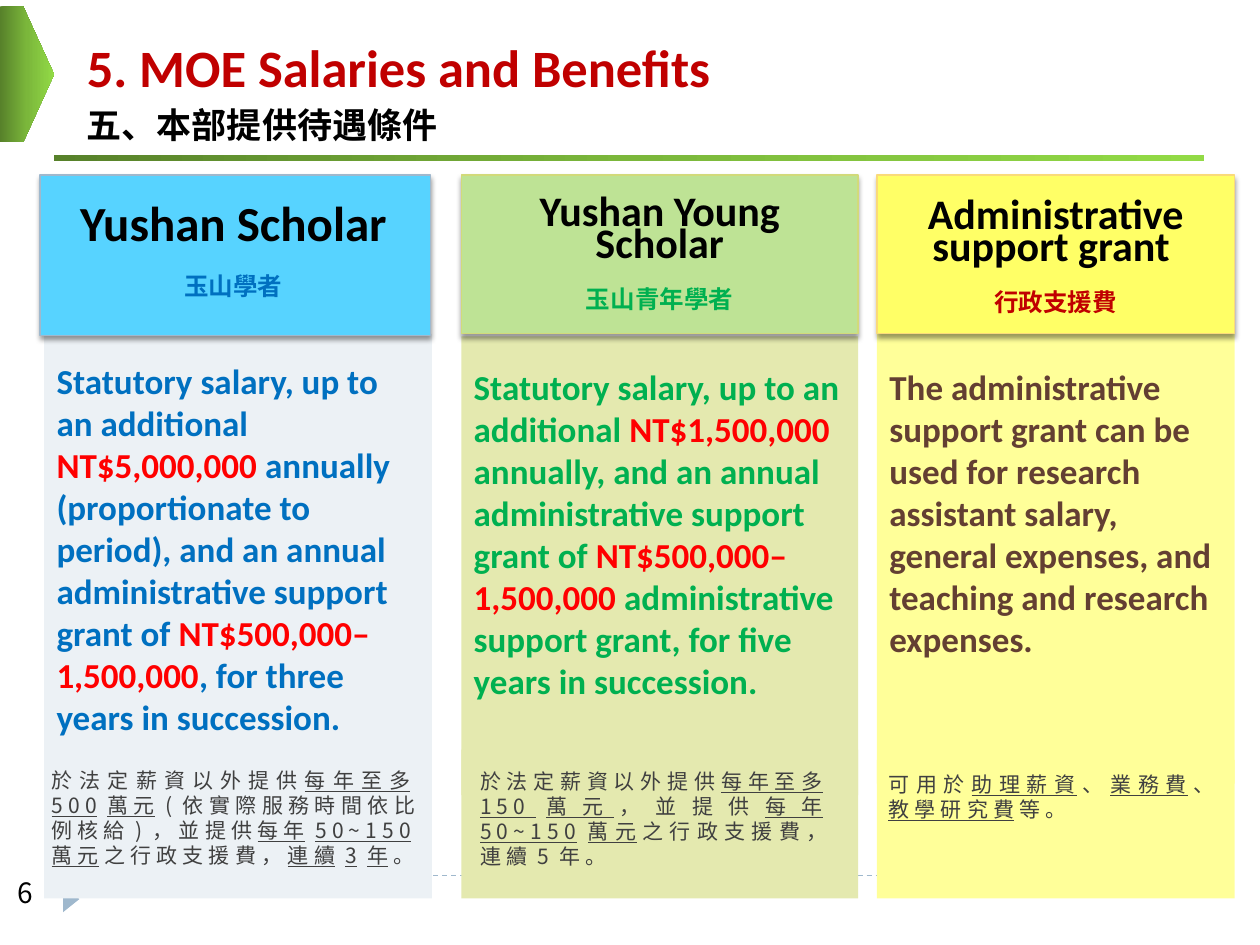
import copy
import dataclasses

import lxml.etree
import pptx
import pptx.dml.color
import pptx.enum.dml
import pptx.enum.shapes
import pptx.enum.text
import pptx.oxml.ns
import pptx.util

Cm = pptx.util.Cm
Pt = pptx.util.Pt
RGBColor = pptx.dml.color.RGBColor
Shape = pptx.enum.shapes.MSO_SHAPE
Anchor = pptx.enum.text.MSO_ANCHOR
Align = pptx.enum.text.PP_ALIGN
qn = pptx.oxml.ns.qn

LATIN = "Calibri"
CHINESE = "Noto Sans CJK SC"
BLACK = RGBColor(0, 0, 0)
GREY = RGBColor(0x40, 0x40, 0x40)
RED = RGBColor(0xFF, 0, 0)
DARK_RED = RGBColor(0xC0, 0, 0)
BLUE = RGBColor(0, 0x70, 0xC0)
GREEN = RGBColor(0, 0xB0, 0x50)
BROWN = RGBColor(0x63, 0x3F, 0x32)
STEEL = RGBColor(0x9F, 0xB8, 0xCD)
SKY = RGBColor(0x57, 0xD3, 0xFF)
PALE_BLUE = RGBColor(0xEC, 0xF1, 0xF5)
LEAF = RGBColor(0xBE, 0xE3, 0x95)
OLIVE = RGBColor(0xD2, 0xDA, 0x7A)
PALE_OLIVE = RGBColor(0xE4, 0xE9, 0xAF)
YELLOW = RGBColor(0xFF, 0xFF, 0x66)
GOLD = RGBColor(0xFA, 0xDA, 0x7A)
PALE_YELLOW = RGBColor(0xFF, 0xFF, 0x99)
GRADIENT = [(0, RGBColor(0x57, 0x81, 0x2A)), (0.5, RGBColor(0x7B, 0xB7, 0x3B)),
            (1, RGBColor(0x92, 0xDA, 0x46))]


@dataclasses.dataclass
class Column:
    """Content, colours and part boxes of one column, in centimetres from its corner."""
    box: tuple
    label_box: tuple
    body_box: tuple
    note_box: tuple
    heading: str
    heading_size: int
    subheading: str
    body: list
    note: list
    head_fill: RGBColor
    head_line: RGBColor
    fill: RGBColor
    accent: RGBColor
    sub_accent: RGBColor
    body_inset: float
    body_anchor: Anchor
    note_insets: tuple


COLUMNS = [
    Column((0.81, 3.53, 7.87, 3.23), (-0.12, 0.1, 8.03, 3.23), (0.08, 3.2, 7.82, 8.66),
           (0.08, 11.79, 7.82, 2.79), "Yushan Scholar", 28, "玉山學者",
           ["Statutory salary, up to an additional ", "NT$5,000,000 ",
            "annually (proportionate to period), and an annual administrative support grant of ",
            "NT$500,000‒1,500,000", ", for three years in succession."],
           ["於法定薪資以外提供", "每年至多500萬元", "(依實際服務時間依比例核給)，並提供",
            "每年50~150萬元", "之行政支援費，", "連續3年", "。"],
           SKY, STEEL, PALE_BLUE, BLUE, BLUE, 0.13, Anchor.MIDDLE, (0.15, 0.15, 0.23, 0.25)),
    Column((9.3, 3.53, 8, 3.2), (0, 0.08, 8, 3.2), (0, 3.25, 8, 9.25),
           (0, 11.58, 8, 3), "Yushan Young Scholar", 24, "玉山青年學者",
           ["Statutory salary, up to an additional ", "NT$1,500,000 ",
            "annually, and an annual administrative support grant of ", "NT$500,000‒1,500,000 ",
            "administrative support grant, for five years in succession."],
           ["於法定薪資以外提供", "每年至多150萬元", "，並提供", "每年50~150萬元",
            "之行政支援費，連續5年。"],
           LEAF, OLIVE, PALE_OLIVE, GREEN, GREEN, 0.58, Anchor.TOP, (0.38, 0.38, 0.51, 0.58)),
    Column((17.68, 3.53, 7.21, 3.2), (0, 0.28, 7.21, 2.92), (0, 3.2, 7.21, 9.07),
           (0, 11.79, 7.21, 2.79), "Administrative support grant ", 24, "行政支援費",
           ["The administrative support grant can be used for research assistant salary, "
            "general expenses, and teaching and research expenses."],
           ["可用於", "助理薪資", "、", "業務費", "、", "教學研究費", "等。"],
           YELLOW, GOLD, PALE_YELLOW, BROWN, DARK_RED, 0.64, Anchor.TOP, (0.23, 0.23, 0.3, 0.33)),
]


def add_text(paragraph, text, size, color, font=LATIN, bold=False, underline=False, spacing=0):
    """Append a formatted run to a paragraph."""
    run = paragraph.add_run()
    run.text = text
    run.font.size = Pt(size)
    run.font.bold = bold
    run.font.underline = underline
    run.font.color.rgb = color
    run.font.name = font
    properties = run.font._element
    east_asian = lxml.etree.Element(qn("a:ea"), typeface=font)
    properties.find(qn("a:latin")).addnext(east_asian)
    if spacing:
        properties.set("spc", str(spacing * 100))


def prepare_frame(shape, insets=(0.25, 0.13, 0.25, 0.13), anchor=Anchor.TOP, align=Align.LEFT):
    """Set wrapping, insets and anchor of a shape and return its first paragraph."""
    frame = shape.text_frame
    frame.word_wrap = True
    frame.auto_size = pptx.enum.text.MSO_AUTO_SIZE.NONE
    frame.vertical_anchor = anchor
    frame.margin_left, frame.margin_top, frame.margin_right, frame.margin_bottom = map(Cm, insets)
    frame.paragraphs[0].alignment = align
    return frame.paragraphs[0]


def add_box(slide, kind, box, fill=None, line=None):
    """Add a preset shape without shadow; box is in centimetres."""
    shape = slide.shapes.add_shape(kind, *map(Cm, box))
    shape.shadow.inherit = False
    if fill is not None:
        shape.fill.solid()
        shape.fill.fore_color.rgb = fill
    if line is None:
        shape.line.fill.background()
    else:
        shape.line.color.rgb = line
        shape.line.width = Pt(0.75)
    return shape


def add_gradient_box(slide, kind, box):
    """Add a shape filled with the green left-to-right gradient."""
    shape = add_box(slide, kind, box)
    shape.fill.gradient()
    shape.fill.gradient_angle = 0
    first_stop = shape._element.spPr.find(".//" + qn("a:gs"))
    first_stop.addnext(copy.deepcopy(first_stop))
    for stop, (position, color) in zip(shape.fill.gradient_stops, GRADIENT):
        stop.position = position
        stop.color.rgb = color
    return shape


def add_drop_shadow(shape):
    """Give a shape a soft shadow falling straight down."""
    effects = shape._element.spPr.find(qn("a:effectLst"))
    shadow = lxml.etree.SubElement(effects, qn("a:outerShdw"), blurRad=str(Pt(3)),
                                   dist=str(Pt(2)), dir="5400000", rotWithShape="0")
    color = lxml.etree.SubElement(shadow, qn("a:srgbClr"), val="000000")
    lxml.etree.SubElement(color, qn("a:alpha"), val="40000")


def add_backdrop(slide, left, width):
    """Draw the dashed rules, corner triangle and green title ornaments."""
    for top in (17.65, 3.18):
        rule = slide.shapes.add_connector(pptx.enum.shapes.MSO_CONNECTOR.STRAIGHT,
                                          Cm(left), Cm(top), Cm(left + width), Cm(top))
        rule.line.color.rgb = STEEL
        rule.line.width = Pt(0.75)
        rule.line.dash_style = pptx.enum.dml.MSO_LINE.DASH
        lxml.etree.SubElement(rule._element.spPr, qn("a:effectLst"))
    triangle = add_box(slide, Shape.ISOSCELES_TRIANGLE, (left - 0.1, 17.96, 0.53, 0.33), STEEL)
    triangle.rotation = 90
    add_gradient_box(slide, Shape.RECTANGLE, (left - 0.18, 3.12, 23.19, 0.13))
    arrow = add_gradient_box(slide, Shape.PENTAGON, (0, 0.13, 1.09, 2.74))
    arrow.adjustments[0] = 0.57


def add_titles(slide, left, top):
    """Place the title, its Chinese line and the page number."""
    title = slide.shapes.title
    title.left, title.top, title.width, title.height = map(Cm, (left, top, 13.41, 1.37))
    add_text(prepare_frame(title, anchor=Anchor.MIDDLE), "5. MOE Salaries and Benefits",
             30, DARK_RED, bold=True)
    subtitle = slide.shapes.add_textbox(*map(Cm, (left, top + 1.22, 8.99, 1.24)))
    add_text(prepare_frame(subtitle, anchor=Anchor.MIDDLE), "五、本部提供待遇條件",
             20, BLACK, font=CHINESE, bold=True)
    number = slide.shapes.add_textbox(*map(Cm, (0.1, 17.53, 1.17, 0.94)))
    add_text(prepare_frame(number), "6", 16, BLACK, font=CHINESE)


def add_column(slide, column):
    """Draw one column: body, shadowed heading and Chinese note."""
    left, top = column.box[:2]

    def place(box):
        """Move a box from the column corner to the slide."""
        return (left + box[0], top + box[1], *box[2:])

    body = add_box(slide, Shape.RECTANGLE, place(column.body_box), column.fill)
    paragraph = prepare_frame(body, (0.25, column.body_inset, 0.25, 0.13), column.body_anchor)
    for index, text in enumerate(column.body):
        add_text(paragraph, text, 20, RED if index % 2 else column.accent, bold=True)

    add_drop_shadow(add_box(slide, Shape.RECTANGLE, column.box, column.head_fill, column.head_line))
    label = slide.shapes.add_textbox(*map(Cm, place(column.label_box)))
    heading = prepare_frame(label, (0.48, 0.28, 0.48, 0.28), Anchor.MIDDLE, Align.CENTER)
    add_text(heading, column.heading, column.heading_size, BLACK, bold=True)
    subheading = label.text_frame.add_paragraph()
    subheading.alignment = Align.CENTER
    add_text(subheading, column.subheading, 14, column.sub_accent, font=CHINESE, bold=True)
    for paragraph, size in ((heading, column.heading_size), (subheading, 14)):
        paragraph.line_spacing = Pt(18)
        paragraph.space_after = Pt(0.35 * size)

    note = add_box(slide, Shape.RECTANGLE, place(column.note_box), column.fill)
    paragraph = prepare_frame(note, column.note_insets, align=Align.JUSTIFY)
    paragraph.line_spacing = Pt(14.3)
    for index, text in enumerate(column.note):
        add_text(paragraph, text, 12, GREY, font=CHINESE, underline=index % 2 == 1, spacing=3)


def main():
    """Build the slide and save it."""
    presentation = pptx.Presentation()
    presentation.slide_width, presentation.slide_height = Cm(25.4), Cm(19.05)
    slide = presentation.slides.add_slide(presentation.slide_layouts[5])
    add_backdrop(slide, 1.27, 22.86)
    add_titles(slide, 1.5, 0.66)
    for column in COLUMNS:
        add_column(slide, column)
    presentation.save("out.pptx")


if __name__ == "__main__":
    main()
